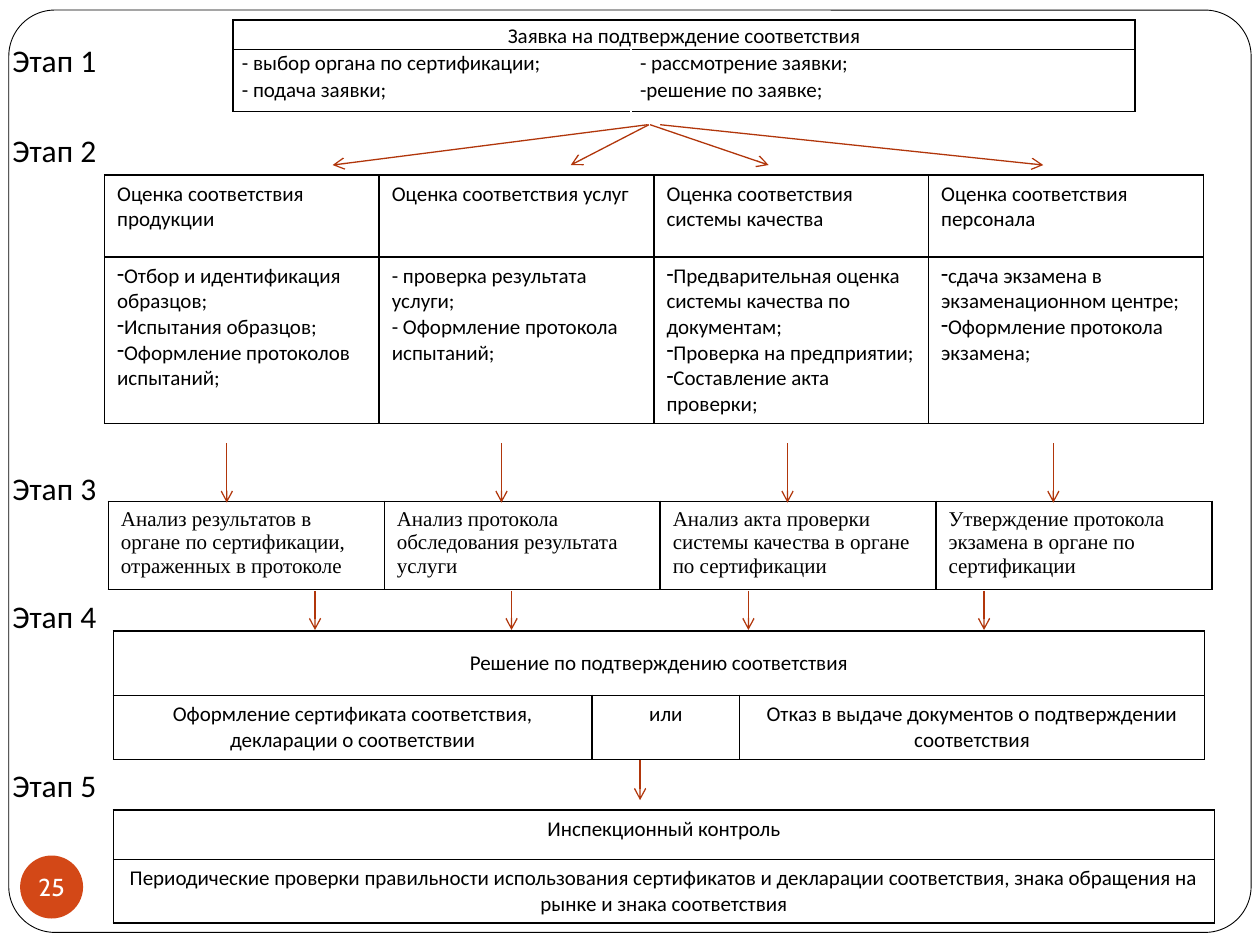
from dataclasses import dataclass, field
from itertools import product

from lxml.etree import SubElement as Sub
from pptx import Presentation
from pptx.dml.color import RGBColor as Rgb
from pptx.enum.shapes import MSO_CONNECTOR as Link, MSO_SHAPE as Kind
from pptx.enum.text import MSO_ANCHOR as Anchor, PP_ALIGN as Align
from pptx.oxml.ns import qn
from pptx.util import Inches, Pt

INK = {"line": "000000", "paper": "FFFFFF", "arrow": "B1360B", "badge": "D34817"}
BODY = {"name": "Calibri", "size": Pt(12), "bold": False}
SERIF = BODY | {"name": "Times New Roman"}
STAGE = BODY | {"size": Pt(18)}
BADGE = BODY | {"name": "Cabin", "size": Pt(14)}
MID = {"alignment": Align.CENTER}
LEFT = {"alignment": Align.LEFT}
TITLE = MID | {"line_spacing": 1.15, "space_after": Pt(10)}
LOOSE = LEFT | {"line_spacing": 1.05}


@dataclass
class Grid:
    """One stage table; a row of one cell spans all columns."""
    left: float
    top: float
    cols: list[float]
    rows: list[float]
    text: list[list[str]]
    para: list[dict]
    font: dict = field(default_factory=lambda: BODY)
    pad: tuple[float, float] = (0.1, 0.05)
    bullet: bool = False
    middle: bool = False
    open: bool = False


@dataclass
class Fan:
    """Arrows that share their start and end heights."""
    top: float
    end: float
    runs: list[tuple[float, float]]


GRIDS = [
    Grid(1.85, 0.16, [3.16, 4], [0.23, 0.49], [
        ["Заявка на подтверждение соответствия"],
        ["- выбор органа по сертификации;\n- подача заявки;",
         "- рассмотрение заявки;\n-решение по заявке;"],
    ], [TITLE, LOOSE], pad=(0.07, 0), open=True),
    Grid(0.83, 1.39, [2.18] * 4, [0.65, 1.3], [
        ["Оценка соответствия продукции", "Оценка соответствия услуг",
         "Оценка соответствия системы качества", "Оценка соответствия персонала"],
        ["-Отбор и идентификация образцов;\n-Испытания образцов;\n"
         "-Оформление протоколов испытаний;",
         "- проверка результата услуги;\n- Оформление протокола испытаний;",
         "-Предварительная оценка системы качества по документам;\n"
         "-Проверка на предприятии;\n-Составление акта проверки;",
         "-сдача экзамена в экзаменационном центре;\n-Оформление протокола экзамена;"],
    ], [LEFT, LEFT], bullet=True),
    Grid(0.86, 3.98, [2.19] * 4, [0.7], [
        ["Анализ результатов в органе по сертификации, отраженных в протоколе",
         "Анализ протокола обследования результата услуги",
         "Анализ акта проверки системы качества в органе по сертификации",
         "Утверждение протокола экзамена в органе по сертификации"],
    ], [LEFT], SERIF),
    Grid(0.9, 5.01, [3.8, 1.17, 3.69], [0.51, 0.5], [
        ["Решение по подтверждению соответствия"],
        ["Оформление сертификата соответствия, декларации о соответствии",
         "или", "Отказ в выдаче документов о подтверждении соответствия"],
    ], [MID, MID], middle=True),
    Grid(0.9, 6.43, [8.74], [0.39, 0.5], [
        ["Инспекционный контроль"],
        ["Периодические проверки правильности использования сертификатов и "
         "декларации соответствия, знака обращения на рынке и знака соответствия"],
    ], [MID, MID]),
]
FANS = [
    Fan(0.99, 1.31, [(5.14, 2.64), (5.24, 8.28), (5.15, 4.53), (5.16, 6.1)]),
    Fan(3.52, 3.99, [(x, x) for x in (1.8, 3.98, 6.25, 8.36)]),
    Fan(4.69, 5, [(x, x) for x in (2.5, 4.06, 5.94, 7.81)]),
    Fan(6.03, 6.35, [(5.08, 5.08)]),
]
STAGES = [0.28, 0.99, 3.67, 4.69, 6.03]


def tint(name: str) -> Rgb:
    return Rgb.from_string(INK[name])


def apply(obj, values: dict) -> None:
    for key, val in values.items():
        setattr(obj, key, val)


def write(frame, text: str, font: dict, para: dict, ink="line", bullet=False) -> None:
    """Fill a frame, one paragraph a line; bullet turns a tight dash into a marker."""
    for i, line in enumerate(text.split("\n")):
        par = frame.add_paragraph() if i else frame.paragraphs[0]
        apply(par, para)
        if bullet and line.startswith("-") and not line.startswith("- "):
            Sub(par._p.get_or_add_pPr(), qn("a:buChar"), char="-")
            line = line[1:]
        run = par.add_run()
        run.text = line
        apply(run.font, font)
        run.font.color.rgb = tint(ink)


def edge(cell, inks: dict[str, str]) -> None:
    """Draw the four borders of a cell, keyed by side."""
    props = cell._tc.get_or_add_tcPr()
    for side, ink in inks.items():
        line = Sub(props, qn(f"a:ln{side}"), w=str(Pt(1)))
        Sub(Sub(line, qn("a:solidFill")), qn("a:srgbClr"), val=INK[ink])


def add_grid(shapes, grid: Grid) -> None:
    high, wide = len(grid.rows), len(grid.cols)
    table = shapes.add_table(
        high, wide, Inches(grid.left), Inches(grid.top),
        Inches(sum(grid.cols)), Inches(sum(grid.rows))).table
    apply(table, {"first_row": False, "horz_banding": False})
    for col, size in zip(table.columns, grid.cols):
        col.width = Inches(size)
    for row, size in zip(table.rows, grid.rows):
        row.height = Inches(size)
    side, rim = map(Inches, grid.pad)
    for r, c in product(range(high), range(wide)):
        cell = table.cell(r, c)
        inks = dict.fromkeys("LRTB", "line")
        if grid.open and r:
            inks["L" if c else "R"] = "paper"
        edge(cell, inks)
        cell.fill.background()
        apply(cell, {"margin_left": side, "margin_right": side,
                     "margin_top": rim, "margin_bottom": rim})
        if c < len(grid.text[r]):
            write(cell.text_frame, grid.text[r][c], grid.font, grid.para[r],
                  bullet=grid.bullet)
    for r, row in enumerate(grid.text):
        if len(row) < wide:
            table.cell(r, 0).merge(table.cell(r, wide - 1))
    if grid.middle:
        table.cell(0, 0).vertical_anchor = Anchor.MIDDLE


def add_fan(shapes, fan: Fan) -> None:
    for start, end in fan.runs:
        arrow = shapes.add_connector(
            Link.STRAIGHT, Inches(start), Inches(fan.top), Inches(end), Inches(fan.end))
        arrow.line.color.rgb = tint("arrow")
        arrow.line.width = Pt(0.75)
        Sub(arrow.line._get_or_add_ln(), qn("a:tailEnd"), type="arrow")
        Sub(arrow._element.spPr, qn("a:effectLst"))


def add_form(shapes, kind: Kind, box: tuple, fill: str):
    form = shapes.add_shape(kind, *map(Inches, box))
    form.shadow.inherit = False
    form.fill.solid()
    form.fill.fore_color.rgb = tint(fill)
    return form


def add_stage(shapes, num: int, top: float) -> None:
    box = shapes.add_textbox(0, Inches(top), Inches(1.14), Inches(0.4))
    box.text_frame.word_wrap = True
    write(box.text_frame, f"Этап {num}", STAGE, LEFT)


def main() -> None:
    deck = Presentation()
    deck.slide_width, deck.slide_height = Inches(10), Inches(7.5)
    shapes = deck.slides.add_slide(deck.slide_layouts[6]).shapes

    frame = add_form(shapes, Kind.ROUNDED_RECTANGLE, (0.07, 0.08, 9.86, 7.32), "paper")
    frame.adjustments[0] = 0.05
    frame.line.color.rgb = tint("line")
    frame.line.width = Pt(0.5)

    badge = add_form(shapes, Kind.OVAL, (0.16, 6.79, 0.5, 0.5), "badge")
    badge.line.fill.background()
    apply(badge.text_frame, {
        "word_wrap": False, "vertical_anchor": Anchor.MIDDLE, "margin_left": 0,
        "margin_right": 0, "margin_top": 0, "margin_bottom": 0})
    write(badge.text_frame, "25", BADGE, MID, "paper")

    for grid in GRIDS:
        add_grid(shapes, grid)
    for fan in FANS:
        add_fan(shapes, fan)
    for num, top in enumerate(STAGES, 1):
        add_stage(shapes, num, top)
    deck.save("out.pptx")


if __name__ == "__main__":
    main()
